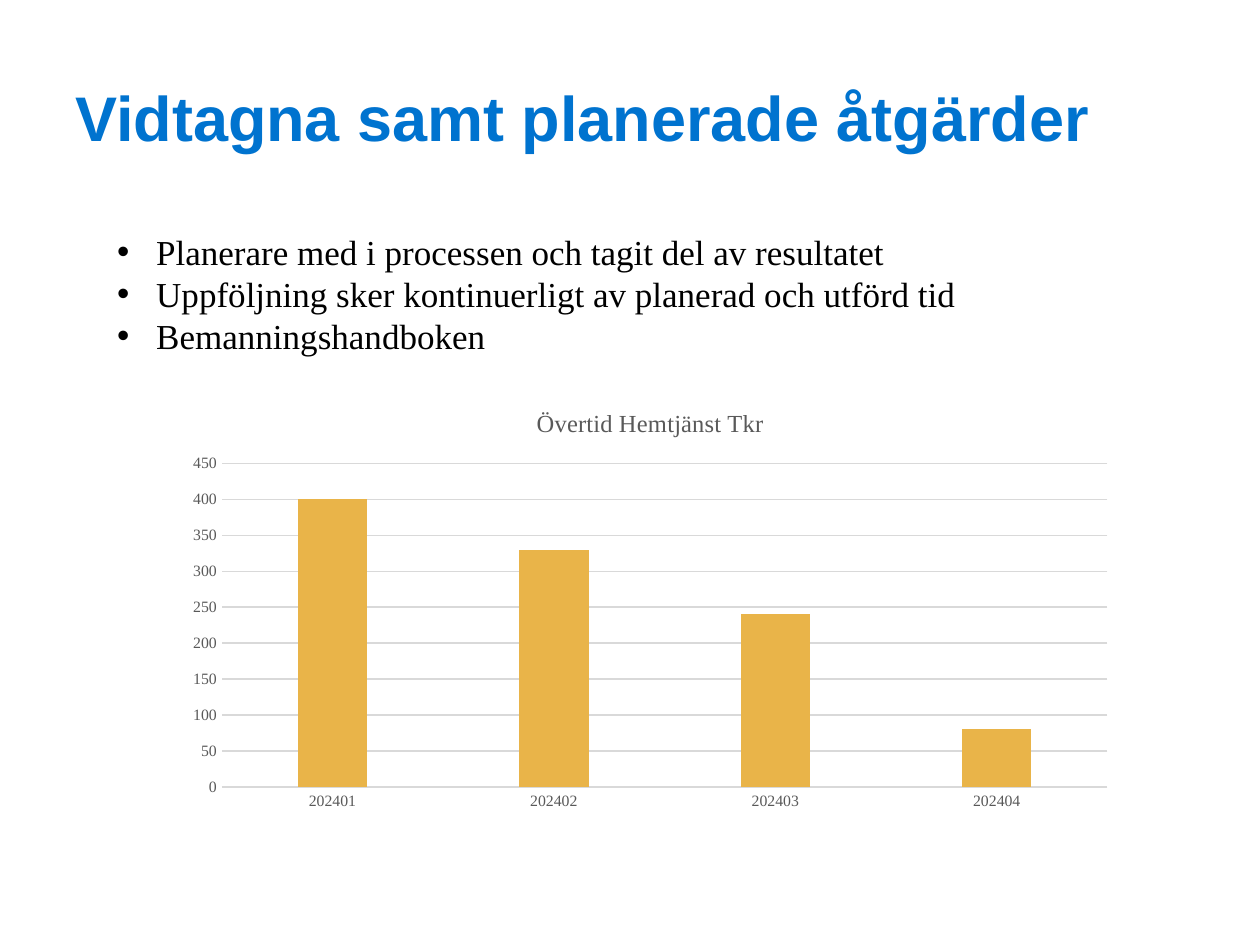
from dataclasses import dataclass

from lxml import etree
from pptx import Presentation
from pptx import util as u
from pptx.chart.data import CategoryChartData
from pptx.dml.color import RGBColor
from pptx.enum import chart as charts, text
from pptx.oxml.ns import qn

SERIF = "Times New Roman"
GRAY, LINE_GRAY = "595959", "D9D9D9"


@dataclass
class Frame:
    left: float
    top: float
    width: float
    height: float

    def lengths(self) -> list:
        return [u.Cm(n) for n in (self.left, self.top, self.width, self.height)]


@dataclass
class Style:
    name: str
    size: float
    color: str
    bold: bool = False


def rgb(color: str) -> RGBColor:
    return RGBColor.from_string(color)


def set_font(font, style: Style) -> None:
    font.name, font.size, font.bold = style.name, u.Pt(style.size), style.bold
    font.color.rgb = rgb(style.color)


def set_line(line, color: str) -> None:
    line.color.rgb = rgb(color)
    line.width = u.Pt(0.75)


def add_bullet(para, indent: float) -> None:
    props = para._p.get_or_add_pPr()
    props.set("marL", str(u.Cm(indent)))
    props.set("indent", str(-u.Cm(indent)))
    etree.SubElement(props, qn("a:buFont")).set("typeface", "Arial")
    etree.SubElement(props, qn("a:buChar")).set("char", "•")


def add_text(page, frame: Frame, lines: list[str], style: Style,
             anchor=text.MSO_ANCHOR.TOP, bullet_indent: float = 0) -> None:
    box = page.shapes.add_textbox(*frame.lengths()).text_frame
    box.word_wrap = True
    box.vertical_anchor = anchor
    for index, line in enumerate(lines):
        para = box.add_paragraph() if index else box.paragraphs[0]
        if bullet_indent:
            add_bullet(para, bullet_indent)
        span = para.add_run()
        span.text = line
        set_font(span.font, style)


def add_overtime_chart(page, frame: Frame) -> None:
    data = CategoryChartData(number_format="#,##0")
    data.categories = ["202401", "202402", "202403", "202404"]
    data.add_series("Övertid Hemtjänst Tkr", [400, 330, 240, 80])
    chart = page.shapes.add_chart(
        charts.XL_CHART_TYPE.COLUMN_CLUSTERED, *frame.lengths(), data).chart
    set_font(chart.font, Style(SERIF, 10, "000000"))
    chart.has_legend = False

    # Chart title
    chart.has_title = True
    span = chart.chart_title.text_frame.paragraphs[0].add_run()
    span.text = "Övertid Hemtjänst Tkr"
    set_font(span.font, Style(SERIF, 14, GRAY))
    chart.chart_title.include_in_layout = False

    # Columns
    plot = chart.plots[0]
    plot.vary_by_categories = False
    plot.gap_width, plot.overlap = 219, -27
    fill = plot.series[0].format.fill
    fill.solid()
    fill.fore_color.rgb = rgb("E9B449")

    # Axes
    for axis in (chart.category_axis, chart.value_axis):
        axis.major_tick_mark = axis.minor_tick_mark = charts.XL_TICK_MARK.NONE
        set_font(axis.tick_labels.font, Style(SERIF, 9, GRAY))
    set_line(chart.category_axis.format.line, LINE_GRAY)
    values = chart.value_axis
    values.minimum_scale, values.maximum_scale, values.major_unit = 0, 450, 50
    values.format.line.fill.background()
    set_line(values.major_gridlines.format.line, LINE_GRAY)


def main() -> None:
    deck = Presentation()
    deck.slide_width, deck.slide_height = u.Cm(25.4), u.Cm(19.05)
    page = deck.slides.add_slide(deck.slide_layouts[6])

    # Heading
    add_text(page, Frame(1.27, 0.76, 22.86, 3.18),
             ["Vidtagna samt planerade åtgärder"],
             Style("Arial", 36, "0073CF", True), text.MSO_ANCHOR.MIDDLE)

    # Measures
    add_text(page, Frame(2.11, 4.52, 19.99, 2.82), [
        "Planerare med i processen och tagit del av resultatet",
        "Uppföljning sker kontinuerligt av planerad och utförd tid",
        "Bemanningshandboken",
    ], Style(SERIF, 20, "000000"), bullet_indent=0.79)

    # Overtime per month
    add_overtime_chart(page, Frame(3.51, 7.82, 19.2, 8.69))
    deck.save("out.pptx")


if __name__ == "__main__":
    main()
